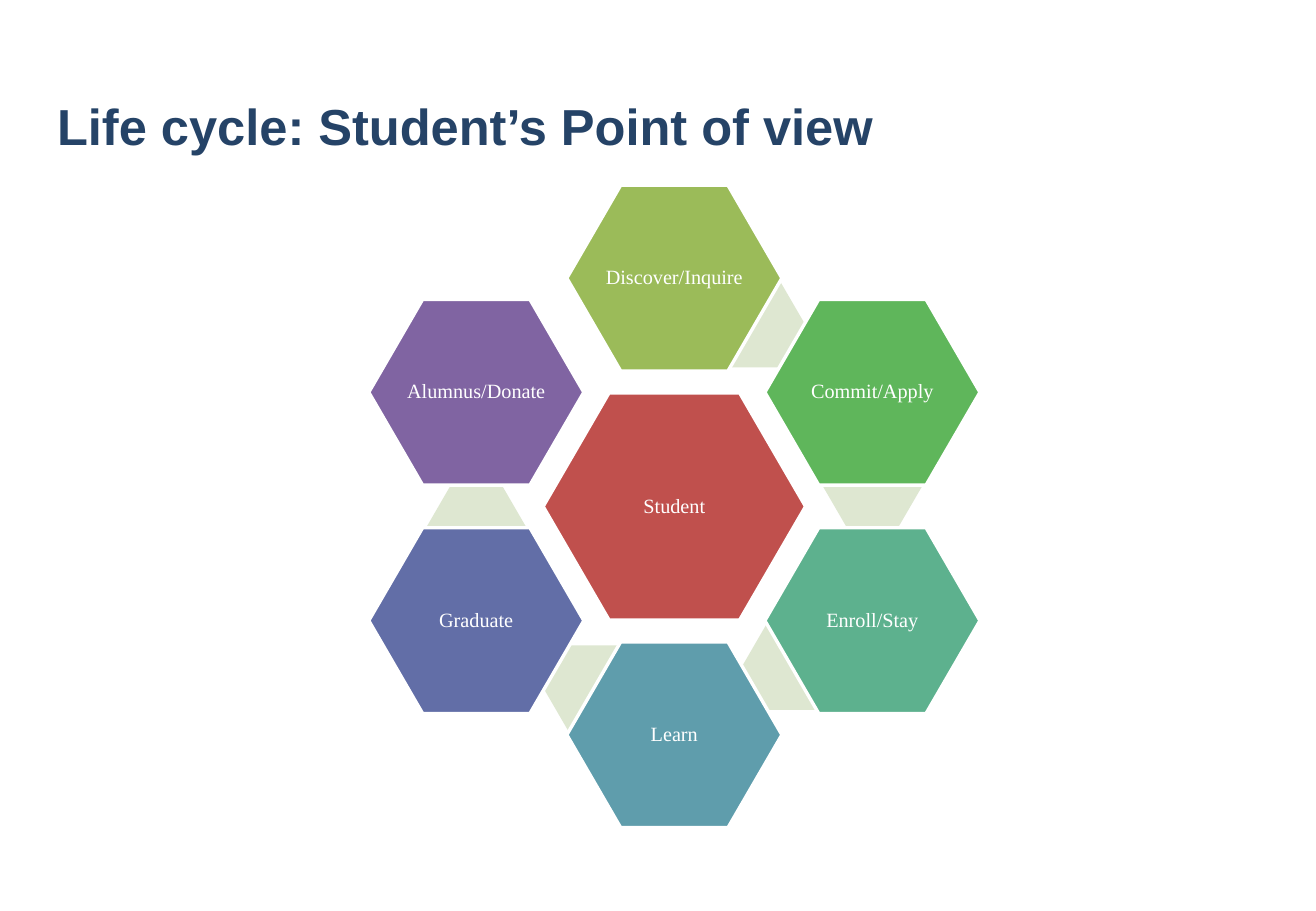
"""Build the student life cycle slide: a ring of six stages around the student."""
from pptx import Presentation
from pptx.dml.color import RGBColor
from pptx.enum.shapes import MSO_SHAPE
from pptx.enum.text import MSO_ANCHOR, PP_ALIGN
from pptx.util import Inches, Pt

COLORS = {
    "title": "254367",
    "white": "FFFFFF",
    "link": "DEE7D1",
    "student": "C0504D",
    "discover": "9BBB59",
    "commit": "5FB65B",
    "enroll": "5DB18E",
    "learn": "5F9DAC",
    "graduate": "626EA7",
    "alumnus": "8064A2",
}
STAGES = [
    ("Discover/Inquire", "discover", (0, -2)),
    ("Commit/Apply", "commit", (1, -1)),
    ("Enroll/Stay", "enroll", (1, 1)),
    ("Learn", "learn", (0, 2)),
    ("Graduate", "graduate", (-1, 1)),
    ("Alumnus/Donate", "alumnus", (-1, -1)),
]
CENTER_X, CENTER_Y = 5.55, 4.17
COLUMN, ROW = 1.63, 0.94
STUDENT_SIZE, STAGE_SIZE, LINK_SIZE = (2.16, 1.87), (1.77, 1.53), (0.82, 0.7)
LINK_SHARE = 0.41


def rgb(name):
    return RGBColor.from_string(COLORS[name])


def style_text(box, size, font, color, bold=False):
    paragraph = box.text_frame.paragraphs[0]
    for span in paragraph.runs:
        span.font.size = Pt(size)
        span.font.name = font
        span.font.bold = bold
        span.font.color.rgb = rgb(color)
    return paragraph


def add_title(page, text):
    box = page.shapes.add_textbox(Inches(0.36), Inches(0.3), Inches(9.93), Inches(1.04))
    frame = box.text_frame
    frame.word_wrap = True
    frame.vertical_anchor = MSO_ANCHOR.BOTTOM
    frame.margin_left = frame.margin_right = Inches(0.11)
    frame.margin_top = frame.margin_bottom = Inches(0.06)
    frame.text = text
    style_text(box, 30, "Arial", "title", bold=True)


def add_hexagon(page, cell, size, color):
    column, row = cell
    width, height = size
    left = CENTER_X + column * COLUMN - width / 2
    top = CENTER_Y + row * ROW - height / 2
    hexagon = page.shapes.add_shape(
        MSO_SHAPE.HEXAGON, Inches(left), Inches(top), Inches(width), Inches(height)
    )
    hexagon.adjustments[0] = 0.29
    hexagon.shadow.inherit = False
    hexagon.fill.solid()
    hexagon.fill.fore_color.rgb = rgb(color)
    hexagon.line.fill.background()
    return hexagon


def add_stage(page, text, cell, size, color):
    hexagon = add_hexagon(page, cell, size, color)
    hexagon.line.color.rgb = rgb("white")
    hexagon.line.width = Pt(2)
    frame = hexagon.text_frame
    frame.word_wrap = False
    frame.vertical_anchor = MSO_ANCHOR.MIDDLE
    frame.margin_left = frame.margin_right = Inches(0.02)
    frame.margin_top = frame.margin_bottom = Inches(0.02)
    frame.text = text
    paragraph = style_text(hexagon, 12, "Times New Roman", "white")
    paragraph.alignment = PP_ALIGN.CENTER
    paragraph.line_spacing = 0.9


def add_links(page):
    cells = [cell for _, _, cell in STAGES]
    for start, end in zip(cells, cells[1:]):
        cell = [a + LINK_SHARE * (b - a) for a, b in zip(start, end)]
        add_hexagon(page, cell, LINK_SIZE, "link")


def main():
    deck = Presentation()
    deck.slide_width, deck.slide_height = Inches(10.83), Inches(7.5)
    page = deck.slides.add_slide(deck.slide_layouts[6])
    add_title(page, "Life cycle: Student’s Point of view")
    add_stage(page, "Student", (0, 0), STUDENT_SIZE, "student")
    add_links(page)
    for text, color, cell in STAGES:
        add_stage(page, text, cell, STAGE_SIZE, color)
    deck.save("out.pptx")


if __name__ == "__main__":
    main()
